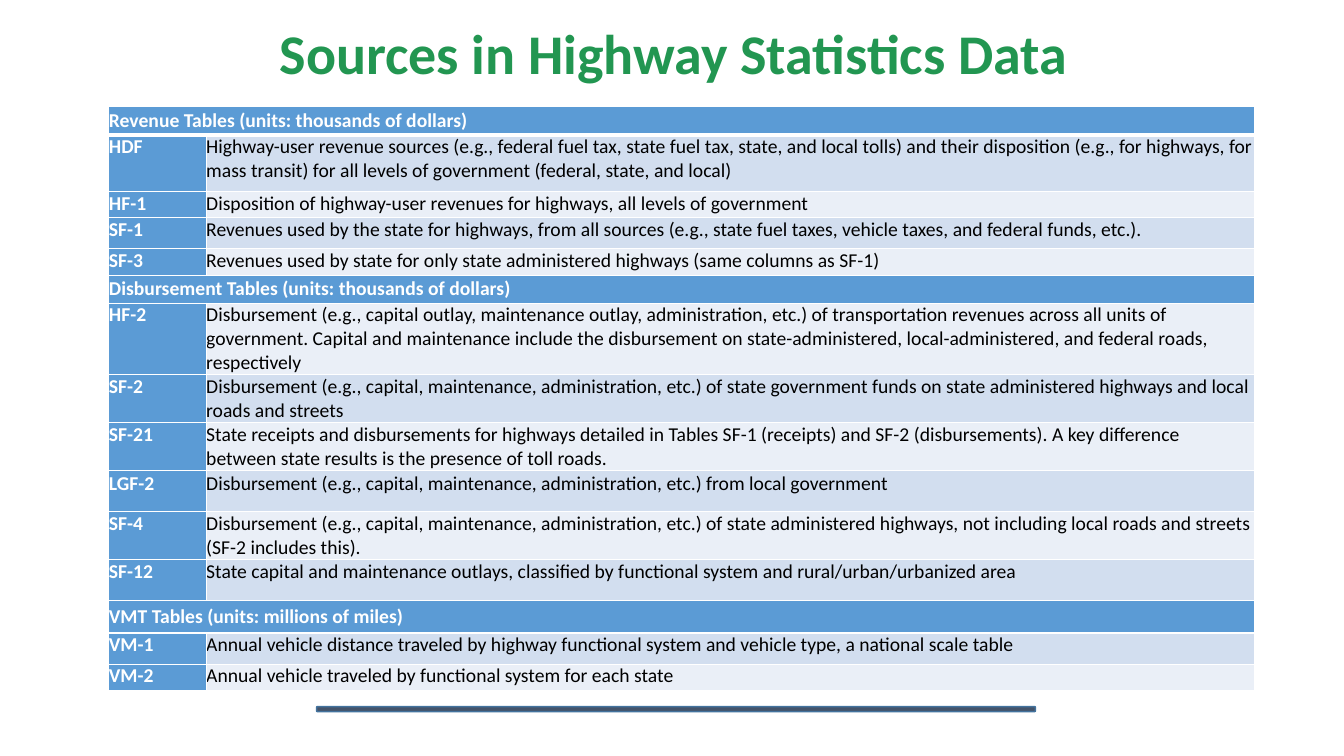
from lxml import etree
from pptx import Presentation
from pptx.dml.color import RGBColor
from pptx.enum.shapes import MSO_SHAPE
from pptx.enum.text import MSO_ANCHOR, PP_ALIGN
from pptx.oxml.ns import qn
from pptx.util import Inches, Pt

ROUNDED = MSO_SHAPE.ROUNDED_RECTANGLE
TOP, MIDDLE = MSO_ANCHOR.TOP, MSO_ANCHOR.MIDDLE
CENTER = PP_ALIGN.CENTER

GREEN = RGBColor(0x22, 0x96, 0x51)
BLUE = RGBColor(0x5B, 0x9B, 0xD5)
BAND_DARK = RGBColor(0xD2, 0xDE, 0xEF)
BAND_LIGHT = RGBColor(0xEA, 0xEF, 0xF7)
SLATE = RGBColor(0x44, 0x54, 0x6A)
STEEL = RGBColor(0x43, 0x73, 0x9E)
WHITE = RGBColor(0xFF, 0xFF, 0xFF)
BLACK = RGBColor(0x00, 0x00, 0x00)
FONT = "Calibri"

CODE_SHARE = 0.085  # share of the table width taken by the code column

# (row height, code, description); a section heading has no description
SOURCES = [
    (0.28, "Revenue Tables (units: thousands of dollars)", None),
    (0.56, "HDF", "Highway-user revenue sources (e.g., federal fuel tax, state fuel tax, state, "
                  "and local tolls) and their disposition (e.g., for highways, for mass transit) "
                  "for all levels of government (federal, state, and local)"),
    (0.26, "HF-1", "Disposition of highway-user revenues for highways, all levels of government"),
    (0.31, "SF-1", "Revenues used by the state for highways, from all sources "
                   "(e.g., state fuel taxes, vehicle taxes, and federal funds, etc.)."),
    (0.26, "SF-3", "Revenues used by state for only state administered highways "
                   "(same columns as SF-1)"),
    (0.28, "Disbursement Tables (units: thousands of dollars)", None),
    (0.47, "HF-2", "Disbursement (e.g., capital outlay, maintenance outlay, administration, etc.) "
                   "of transportation revenues across all units of government. Capital and "
                   "maintenance include the disbursement on state-administered, "
                   "local-administered, and federal roads, respectively"),
    (0.31, "SF-2", "Disbursement (e.g., capital, maintenance, administration, etc.) of state "
                   "government funds on state administered highways and local roads and streets"),
    (0.32, "SF-21", "State receipts and disbursements for highways detailed in Tables SF-1 "
                    "(receipts) and SF-2 (disbursements). A key difference between state results "
                    "is the presence of toll roads."),
    (0.41, "LGF-2", "Disbursement (e.g., capital, maintenance, administration, etc.) "
                    "from local government"),
    (0.41, "SF-4", "Disbursement (e.g., capital, maintenance, administration, etc.) of state "
                   "administered highways, not including local roads and streets "
                   "(SF-2 includes this)."),
    (0.41, "SF-12", "State capital and maintenance outlays, classified by functional system "
                    "and rural/urban/urbanized area"),
    (0.32, "VMT Tables (units: millions of miles)", None),
    (0.31, "VM-1", "Annual vehicle distance traveled by highway functional system "
                   "and vehicle type, a national scale table"),
    (0.26, "VM-2", "Annual vehicle traveled by functional system for each state"),
]


def style(paragraph, size, color, bold):
    font = paragraph.font
    font.name, font.size, font.bold = FONT, Pt(size), bold
    font.color.rgb = color


def set_borders(cell, bottom_width):
    properties = cell._tc.get_or_add_tcPr()
    widths = {"a:lnL": 1, "a:lnR": 1, "a:lnT": 1, "a:lnB": bottom_width}
    for position, (side, width) in enumerate(widths.items()):
        line = etree.Element(qn(side), w=str(Pt(width)))
        fill = etree.SubElement(line, qn("a:solidFill"))
        etree.SubElement(fill, qn("a:srgbClr"), val=str(WHITE))
        properties.insert(position, line)


def fill_cell(cell, text, fill, color, bold, anchor=TOP, bottom_width=1):
    cell.margin_left = cell.margin_right = cell.margin_top = cell.margin_bottom = 0
    cell.vertical_anchor = anchor
    cell.fill.solid()
    cell.fill.fore_color.rgb = fill
    set_borders(cell, bottom_width)
    cell.text = text
    style(cell.text_frame.paragraphs[0], 14, color, bold)


def add_title(slide, left, top, width, height):
    frame = slide.shapes.add_textbox(left, top, width, height).text_frame
    frame.word_wrap = True
    title = frame.paragraphs[0]
    title.text = "Sources in Highway Statistics Data"
    title.alignment = CENTER
    title.line_spacing = 0.9
    style(title, 40, GREEN, True)


def add_sources_table(slide, left, top, width, height):
    table = slide.shapes.add_table(len(SOURCES), 2, left, top, width, height).table
    table.columns[0].width = int(width * CODE_SHARE)
    table.columns[1].width = width - table.columns[0].width
    for index, (row_height, code, description) in enumerate(SOURCES):
        table.rows[index].height = Inches(row_height)
        code_cell, description_cell = table.cell(index, 0), table.cell(index, 1)
        if description is None:
            code_cell.merge(description_cell)
            bottom_width = 3 if index == 0 else 1
            fill_cell(code_cell, code, BLUE, WHITE, True, MIDDLE, bottom_width)
            set_borders(description_cell, bottom_width)
        else:
            band = BAND_DARK if index % 2 else BAND_LIGHT
            fill_cell(code_cell, code, BLUE, WHITE, True)
            fill_cell(description_cell, description, band, BLACK, False)
        if code == "LGF-2":
            for cell in (code_cell, description_cell):
                cell.text_frame.paragraphs[0].line_spacing = 1.07


def add_footer_bar(slide, left, top, width, height):
    bar = slide.shapes.add_shape(ROUNDED, left, top, width, height)
    bar.shadow.inherit = False
    bar.fill.solid()
    bar.fill.fore_color.rgb = SLATE
    bar.line.color.rgb = STEEL
    bar.line.width = Pt(1)


def main():
    deck = Presentation()
    deck.slide_width, deck.slide_height = Inches(13.33), Inches(7.5)
    slide = deck.slides.add_slide(deck.slide_layouts[6])
    add_footer_bar(slide, Inches(3.14), Inches(7.01), Inches(7.13), Inches(0.05))
    add_sources_table(slide, Inches(1.08), Inches(1.06), Inches(11.36), Inches(5.77))
    add_title(slide, Inches(0.31), Inches(0.21), Inches(12.74), Inches(1.1))
    deck.save("out.pptx")


if __name__ == "__main__":
    main()
